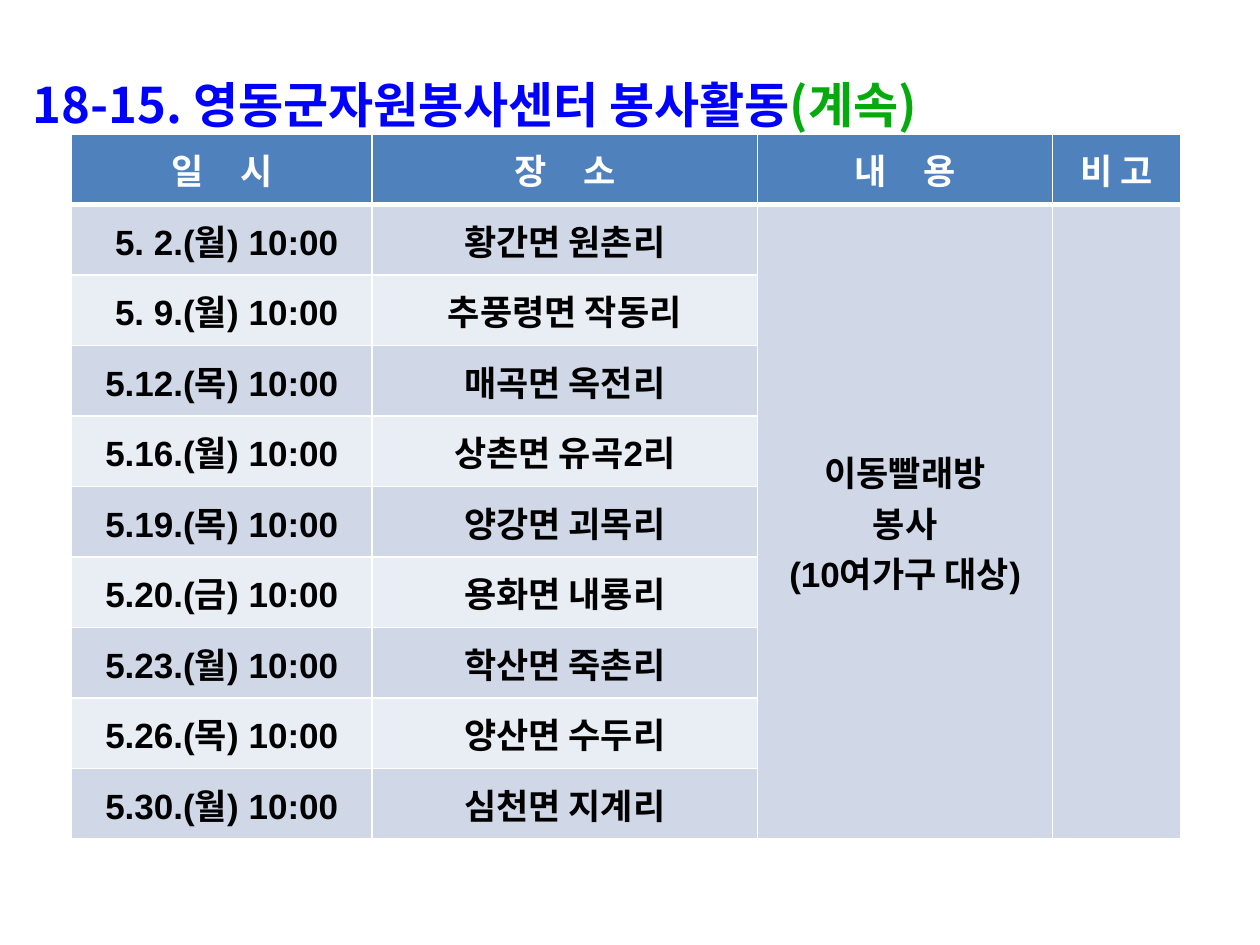
"""Build the volunteer centre schedule slide with its title and table."""
from dataclasses import dataclass

from lxml.etree import SubElement
from pptx import Presentation
from pptx.dml.color import RGBColor as Color
from pptx.enum.text import MSO_ANCHOR as Anchor
from pptx.enum.text import MSO_AUTO_SIZE as AutoSize
from pptx.enum.text import PP_ALIGN as Align
from pptx.oxml.ns import qn
from pptx.util import Pt


@dataclass(frozen=True)
class Theme:
    title: str = "0000FF"
    continued: str = "05AB0D"
    header: str = "4F81BD"
    bands: tuple = ("D0D8E8", "E9EDF4")
    light: str = "FFFFFF"
    dark: str = "000000"
    title_font: str = "Noto Sans CJK KR"
    table_font: str = "Arial"
    korean_font: str = "Noto Sans CJK KR"
    title_size: float = 28
    table_size: float = 20
    rule: float = 1
    header_rule: float = 3


@dataclass(frozen=True)
class Visit:
    time: str
    place: str


THEME = Theme()
LETTER_GAP = 8.3
COLUMN_WIDTHS = (171.5, 220.5, 168.5, 73.5)
ROW_HEIGHT = 40.3
HEADERS = (("일 ", "시"), ("장 ", "소"), ("내 ", "용"), ("비 고",))
ACTIVITY = ("이동빨래방", "봉사", "(10여가구 대상)")
VISITS = (
    Visit(" 5. 2.(월) 10:00", "황간면 원촌리"),
    Visit(" 5. 9.(월) 10:00", "추풍령면 작동리"),
    Visit("5.12.(목) 10:00", "매곡면 옥전리"),
    Visit("5.16.(월) 10:00", "상촌면 유곡2리"),
    Visit("5.19.(목) 10:00", "양강면 괴목리"),
    Visit("5.20.(금) 10:00", "용화면 내룡리"),
    Visit("5.23.(월) 10:00", "학산면 죽촌리"),
    Visit("5.26.(목) 10:00", "양산면 수두리"),
    Visit("5.30.(월) 10:00", "심천면 지계리"),
)


def add_run(paragraph, text: str, font: str, size: float, color: str, gap: float = 0) -> None:
    """Append one bold run, with optional letter spacing in points."""
    run = paragraph.add_run()
    run.text = text
    run.font.name = font
    run.font.size = Pt(size)
    run.font.bold = True
    run.font.color.rgb = Color.from_string(color)
    properties = run.font._element
    SubElement(properties, qn("a:ea")).set("typeface", THEME.korean_font)
    if gap:
        properties.set("spc", str(round(gap * 100)))


def add_title(slide) -> None:
    """Place the title and write its two coloured parts."""
    title = slide.shapes.title
    title.left, title.top, title.width, title.height = Pt(11.5), Pt(22.3), Pt(675.4), Pt(234)
    frame = title.text_frame
    frame.word_wrap = True
    frame.auto_size = AutoSize.NONE
    frame.vertical_anchor = Anchor.TOP
    paragraph = frame.paragraphs[0]
    paragraph.alignment = Align.LEFT
    paragraph.line_spacing = 1.5
    for text, color in (("18-15. 영동군자원봉사센터 봉사활동", THEME.title), ("(계속)", THEME.continued)):
        add_run(paragraph, text, THEME.title_font, THEME.title_size, color)


def style_cell(cell, row: int, fill: str) -> None:
    """Give a cell its white rules, fill and vertical anchor."""
    heavy_sides = {0: "lnB", 1: "lnT"}
    properties = cell._tc.get_or_add_tcPr()
    for side in ("lnL", "lnR", "lnT", "lnB"):
        width = THEME.header_rule if heavy_sides.get(row) == side else THEME.rule
        line = SubElement(properties, qn(f"a:{side}"), w=str(Pt(width)))
        solid = SubElement(line, qn("a:solidFill"))
        SubElement(solid, qn("a:srgbClr"), val=THEME.light)
    cell.fill.solid()
    cell.fill.fore_color.rgb = Color.from_string(fill)
    cell.vertical_anchor = Anchor.MIDDLE


def write_cell(cell, lines: tuple, color: str) -> None:
    """Write centred lines, spacing out the leading runs of each line."""
    frame = cell.text_frame
    for index, runs in enumerate(lines):
        paragraph = frame.add_paragraph() if index else frame.paragraphs[0]
        paragraph.alignment = Align.CENTER
        for position, text in enumerate(runs, start=1):
            gap = LETTER_GAP if position < len(runs) else 0
            add_run(paragraph, text, THEME.table_font, THEME.table_size, color, gap)


def add_schedule(slide) -> None:
    """Draw the schedule table with its merged activity and remark cells."""
    row_count = len(VISITS) + 1
    table = slide.shapes.add_table(
        row_count, len(COLUMN_WIDTHS), Pt(41), Pt(76.6),
        Pt(sum(COLUMN_WIDTHS)), Pt(ROW_HEIGHT * row_count),
    ).table
    for column, width in zip(table.columns, COLUMN_WIDTHS):
        column.width = Pt(width)
    for row_index, row in enumerate(table.rows):
        row.height = Pt(ROW_HEIGHT)
        for column_index, cell in enumerate(row.cells):
            band = 0 if column_index > 1 else (row_index - 1) % 2
            style_cell(cell, row_index, THEME.bands[band] if row_index else THEME.header)
    for column_index, runs in enumerate(HEADERS):
        write_cell(table.cell(0, column_index), (runs,), THEME.light)
    for row_index, visit in enumerate(VISITS, start=1):
        for column_index, text in enumerate((visit.time, visit.place)):
            write_cell(table.cell(row_index, column_index), ((text,),), THEME.dark)
    for column_index in (2, 3):
        table.cell(1, column_index).merge(table.cell(row_count - 1, column_index))
    write_cell(table.cell(1, 2), tuple((line,) for line in ACTIVITY), THEME.dark)


def main() -> None:
    """Create and save the presentation."""
    presentation = Presentation()
    presentation.slide_width, presentation.slide_height = Pt(720), Pt(540)
    slide = presentation.slides.add_slide(presentation.slide_layouts[5])
    add_title(slide)
    add_schedule(slide)
    presentation.save("out.pptx")


if __name__ == "__main__":
    main()
